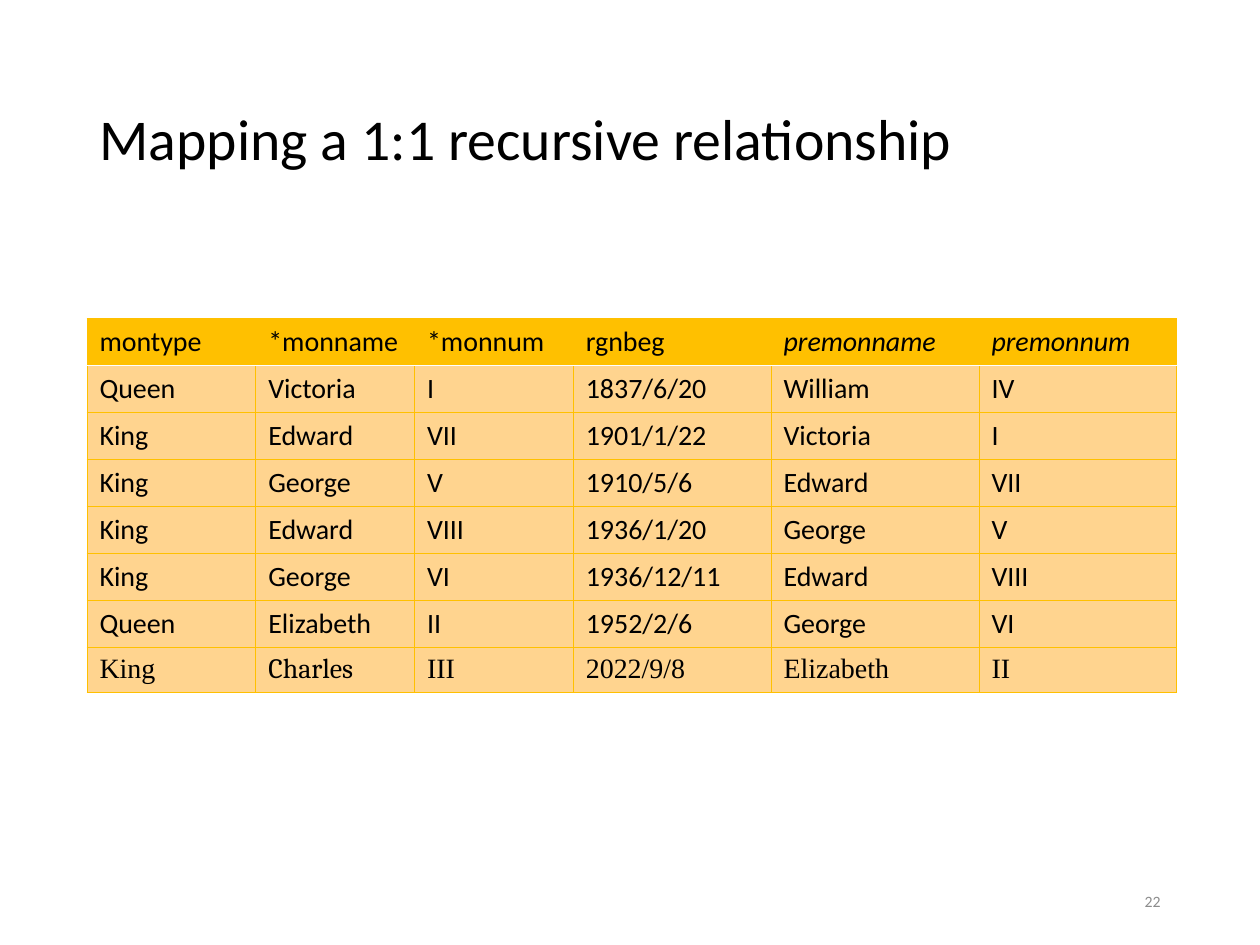
from lxml.etree import SubElement
from pptx import Presentation
from pptx.dml.color import RGBColor
from pptx.enum.text import MSO_ANCHOR, MSO_AUTO_SIZE, PP_ALIGN
from pptx.oxml.ns import qn
from pptx.util import Inches, Pt

COLORS = {"text": "000000", "number": "8C8C8C", "header": "FFC000",
          "body": "FFD48F", "rule": "FFC000", "divider": "FFFFFF"}

TITLE = "Mapping a 1:1 recursive relationship"
PAGE_NUMBER = "22"
HEADER = ["montype", "*monname", "*monnum", "rgnbeg", "premonname", "premonnum"]
FOREIGN_KEYS = {"premonname", "premonnum"}
MONARCHS = [
    ["Queen", "Victoria", "I", "1837/6/20", "William", "IV"],
    ["King", "Edward", "VII", "1901/1/22", "Victoria", "I"],
    ["King", "George", "V", "1910/5/6", "Edward", "VII"],
    ["King", "Edward", "VIII", "1936/1/20", "George", "V"],
    ["King", "George", "VI", "1936/12/11", "Edward", "VIII"],
    ["Queen", "Elizabeth", "II", "1952/2/6", "George", "VI"],
    ["King", "Charles", "III", "2022/9/8", "Elizabeth", "II"],
]
ROWS = [HEADER] + MONARCHS
LAST_ROW = len(ROWS) - 1
JUSTIFIED_ROWS = 6
COLUMN_WIDTHS = [1.34, 1.26, 1.26, 1.57, 1.65, 1.57]
ROW_HEIGHTS = [0.37] * LAST_ROW + [0.36]


def write(frame, text, size, color="text", font="Calibri", italic=False, **layout):
    """Fill a text frame with one run; layout holds paragraph attributes."""
    paragraph = frame.paragraphs[0]
    for name, value in layout.items():
        setattr(paragraph, name, value)
    span = paragraph.add_run()
    span.text = text
    formats = {"size": Pt(size), "name": font, "bold": False, "italic": italic}
    for name, value in formats.items():
        setattr(span.font, name, value)
    span.font.color.rgb = RGBColor.from_string(COLORS[color])


def place(shape, left, top, width, height):
    shape.left, shape.top = Inches(left), Inches(top)
    shape.width, shape.height = Inches(width), Inches(height)


def add_border(cell, side, color, points):
    properties = cell._tc.get_or_add_tcPr()
    line = SubElement(properties, qn(f"a:ln{side}"), w=str(Pt(points)))
    fill = SubElement(line, qn("a:solidFill"))
    SubElement(fill, qn("a:srgbClr"), val=COLORS[color])


def cell_font(row, column):
    if row < LAST_ROW:
        return "Calibri"
    return "Cambria" if column == 1 else "Times New Roman"


def fill_cell(cell, row, column):
    for side in "LRTB":
        divider = (row, side) in {(0, "B"), (1, "T")}
        add_border(cell, side, *(("divider", 1) if divider else ("rule", 0.5)))
    cell.fill.solid()
    cell.fill.fore_color.rgb = RGBColor.from_string(COLORS["body" if row else "header"])
    layout = {"alignment": PP_ALIGN.LEFT}
    if row < JUSTIFIED_ROWS:
        layout = {"alignment": PP_ALIGN.JUSTIFY, "space_before": Pt(3), "space_after": Pt(3)}
    text = ROWS[row][column]
    write(cell.text_frame, text, 16, font=cell_font(row, column),
          italic=text in FOREIGN_KEYS, **layout)


def add_monarch_table(page):
    frame = page.shapes.add_table(len(ROWS), len(HEADER), Inches(0.69), Inches(2.53),
                                  Inches(sum(COLUMN_WIDTHS)), Inches(sum(ROW_HEIGHTS)))
    table = frame.table
    table.first_row = table.horz_banding = False
    for column, width in zip(table.columns, COLUMN_WIDTHS):
        column.width = Inches(width)
    for row, height in zip(table.rows, ROW_HEIGHTS):
        row.height = Inches(height)
    for row in range(len(ROWS)):
        for column in range(len(HEADER)):
            fill_cell(table.cell(row, column), row, column)


def main():
    deck = Presentation()
    deck.slide_width, deck.slide_height = Inches(10), Inches(7.5)
    page = deck.slides.add_slide(deck.slide_layouts[5])

    title = page.shapes.title
    place(title, 0.69, 0.4, 8.62, 1.45)
    title.text_frame.auto_size = MSO_AUTO_SIZE.NONE
    title.text_frame.vertical_anchor = MSO_ANCHOR.MIDDLE
    write(title.text_frame, TITLE, 33, alignment=PP_ALIGN.LEFT, line_spacing=0.9)

    add_monarch_table(page)

    number = page.shapes.add_textbox(Inches(7.06), Inches(6.95), Inches(2.25), Inches(0.4))
    number.text_frame.word_wrap = True
    number.text_frame.vertical_anchor = MSO_ANCHOR.MIDDLE
    write(number.text_frame, PAGE_NUMBER, 9, "number", alignment=PP_ALIGN.RIGHT)

    deck.save("out.pptx")


if __name__ == "__main__":
    main()
